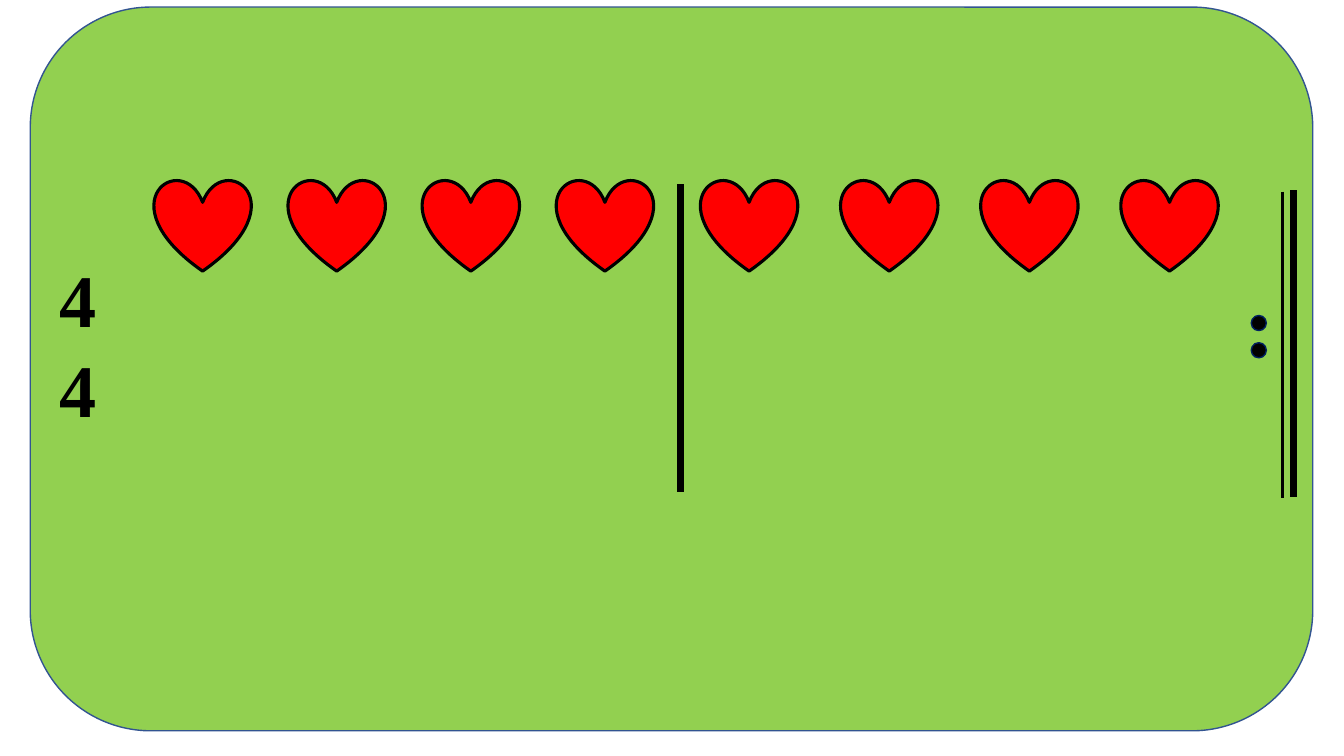
from lxml import etree
from pptx import Presentation
from pptx.dml.color import RGBColor
from pptx.enum.shapes import MSO_CONNECTOR, MSO_SHAPE
from pptx.oxml.ns import qn
from pptx.util import Inches, Pt

STRAIGHT = MSO_CONNECTOR.STRAIGHT
PANEL = MSO_SHAPE.ROUNDED_RECTANGLE
HEART = MSO_SHAPE.HEART
DOT = MSO_SHAPE.OVAL

GREEN = RGBColor(0x92, 0xD0, 0x50)
BLUE = RGBColor(0x32, 0x54, 0x91)
NAVY = RGBColor(0x00, 0x20, 0x60)
RED = RGBColor(0xFF, 0x00, 0x00)
BLACK = RGBColor(0x00, 0x00, 0x00)

BEATS = 4
# Left edge of the first heart and step between hearts, per bar
BARS = [(1.53, 1.33), (6.95, 1.39)]


def add_form(slide, kind, box, fill, line, width):
    form = slide.shapes.add_shape(kind, *map(Inches, box))
    form.shadow.inherit = False
    form.fill.solid()
    form.fill.fore_color.rgb = fill
    form.line.color.rgb = line
    form.line.width = Pt(width)


def add_bar(slide, x, top, bottom, width):
    bar = slide.shapes.add_connector(
        STRAIGHT, Inches(x), Inches(top), Inches(x), Inches(bottom))
    bar.line.color.rgb = BLACK
    bar.line.width = Pt(width)
    etree.SubElement(bar._element.spPr, qn("a:effectLst"))


def add_meter(slide, box, text):
    frame = slide.shapes.add_textbox(*map(Inches, box)).text_frame
    frame.word_wrap = True
    frame.margin_left = frame.margin_right = Inches(0.13)
    frame.margin_top = frame.margin_bottom = Inches(0.07)
    frame.text = text
    for line in frame.paragraphs:
        line.line_spacing = Pt(64)
        font = line.runs[0].font
        font.name = "Times New Roman"
        font.size = Pt(53)
        font.bold = True
        font.color.rgb = BLACK


def main():
    deck = Presentation()
    deck.slide_width = Inches(13.33)
    deck.slide_height = Inches(7.5)
    slide = deck.slides.add_slide(deck.slide_layouts[6])

    # Green panel
    add_form(slide, PANEL, (0.3, 0.07, 12.72, 7.18), GREEN, BLUE, 1)

    # One heart per beat
    for start, step in BARS:
        for beat in range(BEATS):
            box = (start + beat * step, 1.78, 0.96, 0.91)
            add_form(slide, HEART, box, RED, BLACK, 2.25)

    # Time signature
    add_meter(slide, (0.46, 2.44, 0.75, 1.92), "4\n4")

    # Bar line and closing double bar
    add_bar(slide, 6.75, 1.83, 4.88, 4.5)
    add_bar(slide, 12.72, 1.9, 4.94, 2.25)
    add_bar(slide, 12.83, 1.89, 4.93, 4.5)

    # Repeat dots
    for top in (3.13, 3.4):
        add_form(slide, DOT, (12.41, top, 0.15, 0.15), BLACK, NAVY, 1)

    deck.save("out.pptx")


if __name__ == "__main__":
    main()
